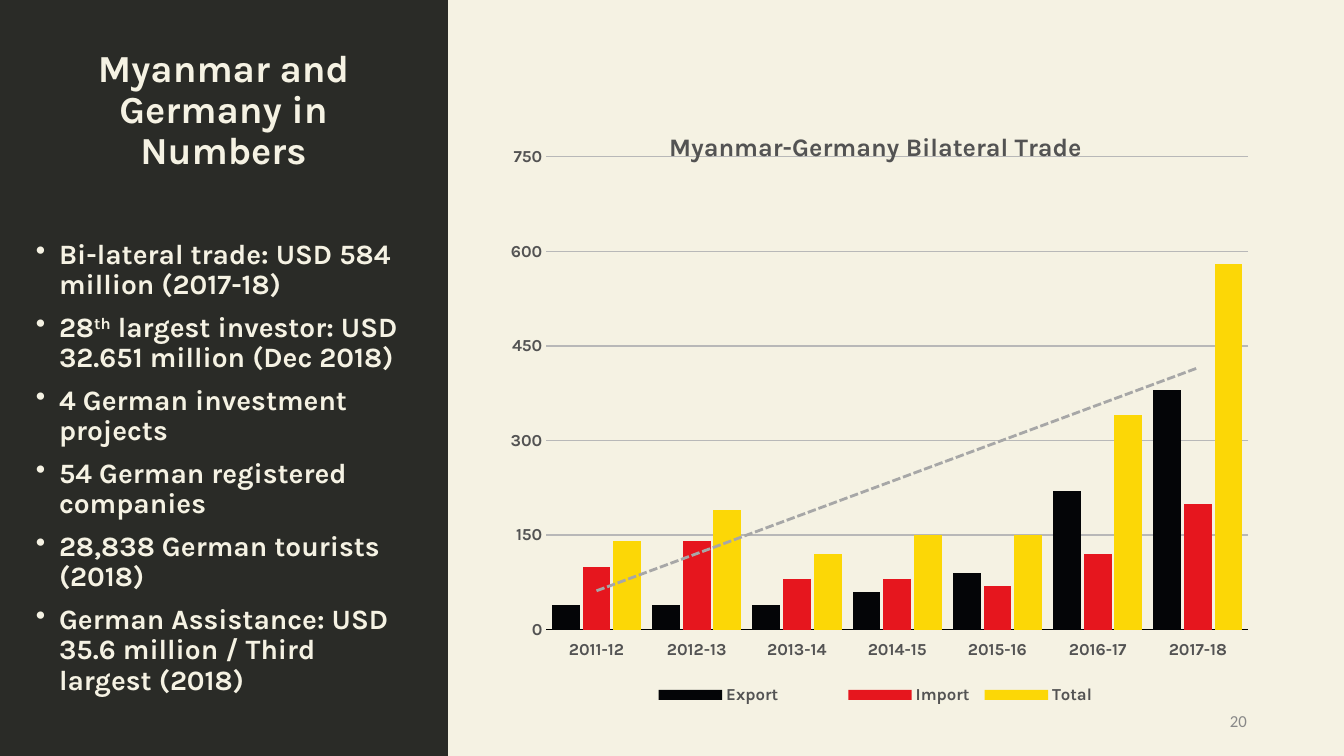
from dataclasses import dataclass

from lxml.etree import SubElement
from pptx import Presentation
from pptx.chart.chart import Chart
from pptx.chart.data import CategoryChartData
from pptx.dml.color import RGBColor
from pptx.enum.chart import XL_CHART_TYPE, XL_LEGEND_POSITION, XL_TICK_LABEL_POSITION, XL_TICK_MARK
from pptx.enum.shapes import MSO_SHAPE
from pptx.enum.text import MSO_ANCHOR, MSO_AUTO_SIZE, PP_ALIGN
from pptx.oxml import parse_xml
from pptx.oxml.ns import nsdecls, qn
from pptx.slide import Slide
from pptx.text.text import Font, TextFrame
from pptx.util import Emu, Pt

SCALE = 12192000 / 1344
CREAM = RGBColor(0xF5, 0xF2, 0xE3)
CHARCOAL = RGBColor(0x2A, 0x2B, 0x27)
BLACK = RGBColor(0x00, 0x00, 0x00)
LABEL_GREY = RGBColor(0x53, 0x53, 0x53)
GRID_GREY = RGBColor(0xB8, 0xB8, 0xB8)
TREND_GREY = RGBColor(0xA7, 0xA7, 0xA7)
NUMBER_GREY = RGBColor(0x88, 0x88, 0x88)
EXPORT_BLACK = RGBColor(0x04, 0x05, 0x07)
IMPORT_RED = RGBColor(0xE6, 0x16, 0x1E)
TOTAL_GOLD = RGBColor(0xFC, 0xD7, 0x06)


@dataclass(frozen=True)
class Fact:
    lead: str
    raised: str = ""
    rest: str = ""


@dataclass(frozen=True)
class Flow:
    name: str
    values: tuple[int, ...]
    color: RGBColor


HEADING = "Myanmar and Germany in Numbers"
FACTS = (
    Fact("Bi-lateral trade: USD 584 million (2017-18)"),
    Fact("28", "th", " largest investor: USD 32.651 million (Dec 2018)"),
    Fact("4 German investment projects"),
    Fact("54 German registered companies"),
    Fact("28,838 German tourists (2018)"),
    Fact("German Assistance: USD 35.6 million / Third largest (2018)"),
)
YEARS = [f"{year}-{year - 1999}" for year in range(2011, 2018)]
FLOWS = (
    Flow("Export", (40, 40, 40, 60, 90, 220, 380), EXPORT_BLACK),
    Flow("Import", (100, 140, 80, 80, 70, 120, 200), IMPORT_RED),
    Flow("Total", (140, 190, 120, 150, 150, 340, 580), TOTAL_GOLD),
)


def px(length: int) -> Emu:
    """Convert slide pixels to EMU."""
    return Emu(round(length * SCALE))


def style_font(font: Font, size: float, color: RGBColor, name: str = "Karla", bold: bool = True) -> None:
    """Set the face, size, weight and colour of a font."""
    font.name = name
    font.size = Pt(size)
    font.bold = bold
    font.color.rgb = color


def add_text_frame(slide: Slide, left: int, top: int, width: int, height: int) -> TextFrame:
    """Add a text box with narrow insets and return its frame."""
    frame = slide.shapes.add_textbox(px(left), px(top), px(width), px(height)).text_frame
    frame.margin_left = frame.margin_right = frame.margin_top = frame.margin_bottom = px(5)
    return frame


def add_fact(frame: TextFrame, fact: Fact, space_before: int) -> None:
    """Append one bulleted fact, with its optional superscript."""
    paragraph = frame.add_paragraph()
    paragraph.line_spacing = 0.9
    paragraph.space_before = Pt(space_before)
    properties = paragraph._p.get_or_add_pPr()
    properties.set("marL", str(px(23)))
    properties.set("indent", str(-px(23)))
    SubElement(properties, qn("a:buChar")).set("char", "•")
    for part in filter(None, (fact.lead, fact.raised, fact.rest)):
        run = paragraph.add_run()
        run.text = part
        style_font(run.font, 20, CREAM)
        if part == fact.raised:
            run.font._element.set("baseline", "29000")


def add_panel(slide: Slide) -> None:
    """Draw the dark panel with its heading and facts."""
    panel = slide.shapes.add_shape(MSO_SHAPE.RECTANGLE, 0, 0, px(448), px(756))
    panel.shadow.inherit = False
    panel.fill.solid()
    panel.fill.fore_color.rgb = CHARCOAL
    panel.line.fill.background()
    frame = add_text_frame(slide, 31, 44, 385, 668)
    frame.word_wrap = True
    heading = frame.paragraphs[0]
    heading.text = HEADING
    heading.alignment = PP_ALIGN.CENTER
    heading.line_spacing = 0.9
    heading.space_before = Pt(9)
    style_font(heading.runs[0].font, 27.3, CREAM)
    for index, fact in enumerate(FACTS):
        add_fact(frame, fact, 9 if index else 48)


def place_part(parent, index: int, x: float, y: float, width: float, height: float, inner: bool = False) -> None:
    """Give a chart part a manual layout in fractions of the chart."""
    for existing in parent.findall(qn("c:layout")):
        parent.remove(existing)
    target = '<c:layoutTarget val="inner"/>' if inner else ""
    parent.insert(index, parse_xml(
        f'<c:layout {nsdecls("c")}><c:manualLayout>{target}'
        '<c:xMode val="edge"/><c:yMode val="edge"/>'
        f'<c:x val="{x}"/><c:y val="{y}"/><c:w val="{width}"/><c:h val="{height}"/>'
        '</c:manualLayout></c:layout>'))


def style_axes(chart: Chart) -> None:
    """Format both axes and the gridlines."""
    years, amounts = chart.category_axis, chart.value_axis
    for axis in (years, amounts):
        axis.major_tick_mark = axis.minor_tick_mark = XL_TICK_MARK.NONE
        style_font(axis.tick_labels.font, 12, LABEL_GREY)
    years.tick_label_position = XL_TICK_LABEL_POSITION.LOW
    years.format.line.color.rgb = BLACK
    years.format.line.width = Pt(1)
    amounts.minimum_scale, amounts.maximum_scale, amounts.major_unit = 0, 750, 150
    amounts.format.line.fill.background()
    amounts.major_gridlines.format.line.color.rgb = GRID_GREY
    amounts.major_gridlines.format.line.width = Pt(1)


def add_trend(total) -> None:
    """Add a dashed linear trend line to a series."""
    total._element.find(qn("c:cat")).addprevious(parse_xml(
        f'<c:trendline {nsdecls("c", "a")}><c:spPr><a:ln w="{Pt(2)}"><a:solidFill>'
        f'<a:srgbClr val="{TREND_GREY}"/></a:solidFill><a:prstDash val="sysDash"/></a:ln></c:spPr>'
        '<c:trendlineType val="linear"/><c:dispRSqr val="0"/><c:dispEq val="0"/></c:trendline>'))


def add_legend(chart: Chart) -> None:
    """Place the legend below the bars, without the trend line."""
    chart.has_legend = True
    legend = chart.legend
    legend.position = XL_LEGEND_POSITION.BOTTOM
    legend.include_in_layout = True
    style_font(legend.font, 12, LABEL_GREY)
    legend._element.insert(1, parse_xml(
        f'<c:legendEntry {nsdecls("c")}><c:idx val="{len(FLOWS)}"/><c:delete val="1"/></c:legendEntry>'))
    place_part(legend._element, 2, 0.2, 0.95, 0.6, 0.05)


def add_trade_chart(slide: Slide) -> None:
    """Chart the bilateral trade by year."""
    trade = CategoryChartData()
    trade.categories = YEARS
    for flow in FLOWS:
        trade.add_series(flow.name, flow.values)
    chart = slide.shapes.add_chart(
        XL_CHART_TYPE.COLUMN_CLUSTERED, px(499), px(108), px(753), px(602), trade).chart
    style_font(chart.font, 10, BLACK, "Calibri", False)
    chart.has_title = True
    title = chart.chart_title.text_frame
    title.text = "Myanmar-Germany Bilateral Trade"
    style_font(title.paragraphs[0].runs[0].font, 18, LABEL_GREY)
    plot = chart.plots[0]
    plot.gap_width, plot.overlap, plot.vary_by_categories = 40, -10, False
    for series, flow in zip(plot.series, FLOWS):
        series.format.fill.solid()
        series.format.fill.fore_color.rgb = flow.color
    add_trend(plot.series[-1])
    style_axes(chart)
    add_legend(chart)
    place_part(chart._chartSpace.chart.plotArea, 0, 0.063, 0.081, 0.932, 0.786, inner=True)


def add_page_number(slide: Slide) -> None:
    """Write the page number at the lower right."""
    frame = add_text_frame(slide, 1223, 706, 29, 29)
    frame.word_wrap = False
    frame.auto_size = MSO_AUTO_SIZE.SHAPE_TO_FIT_TEXT
    frame.vertical_anchor = MSO_ANCHOR.MIDDLE
    number = frame.paragraphs[0]
    number.text = "20"
    number.alignment = PP_ALIGN.RIGHT
    style_font(number.runs[0].font, 12, NUMBER_GREY, "Calibri", False)


def main() -> None:
    """Build and save the slide."""
    deck = Presentation()
    deck.slide_width, deck.slide_height = px(1344), px(756)
    slide = deck.slides.add_slide(deck.slide_layouts[6])
    slide.background.fill.solid()
    slide.background.fill.fore_color.rgb = CREAM
    add_panel(slide)
    add_page_number(slide)
    add_trade_chart(slide)
    deck.save("out.pptx")


if __name__ == "__main__":
    main()
